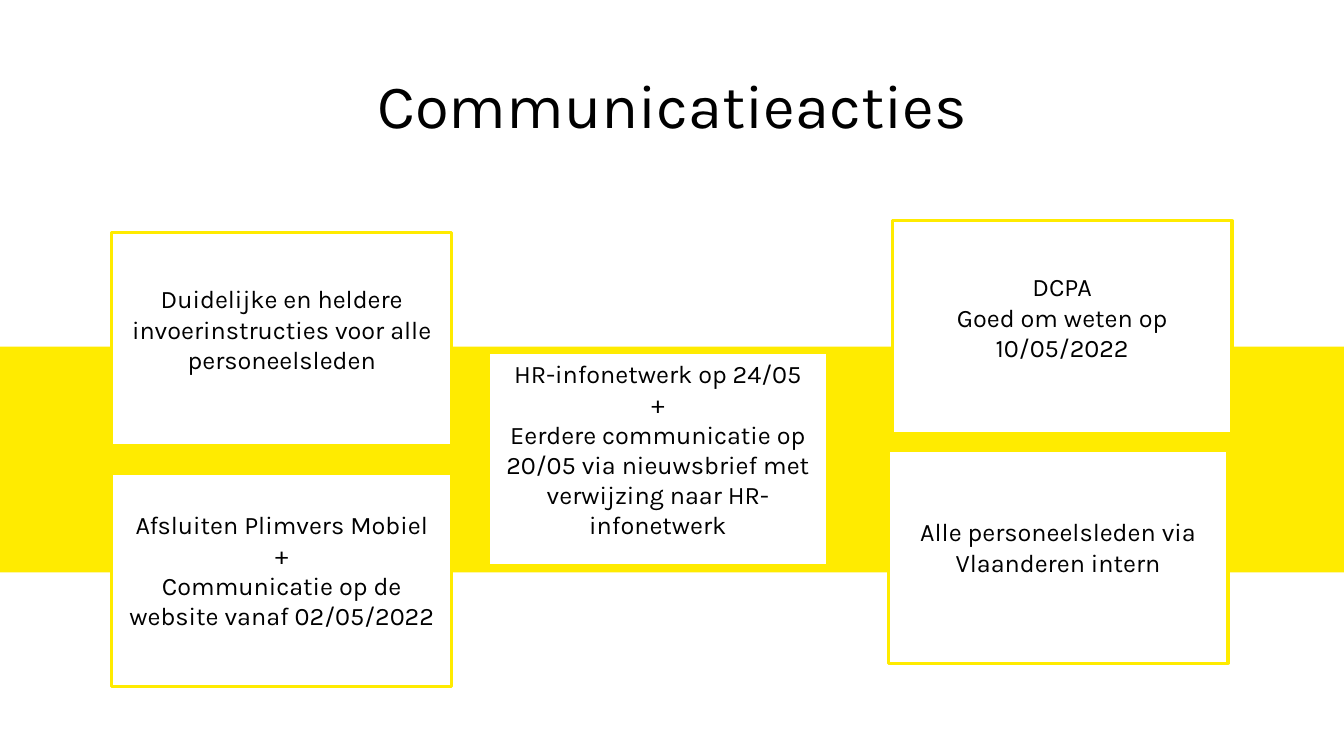
from dataclasses import dataclass

from pptx import Presentation
from pptx.dml.color import RGBColor
from pptx.enum.shapes import MSO_SHAPE
from pptx.enum.text import MSO_ANCHOR, PP_ALIGN
from pptx.util import Pt

RECTANGLE = MSO_SHAPE.RECTANGLE
MIDDLE = MSO_ANCHOR.MIDDLE
CENTER = PP_ALIGN.CENTER
EMU_PER_PX = 9144


@dataclass(frozen=True)
class Theme:
    font: str = "Karla"
    yellow: RGBColor = RGBColor(0xFF, 0xEB, 0x00)
    white: RGBColor = RGBColor(0xFF, 0xFF, 0xFF)
    black: RGBColor = RGBColor(0, 0, 0)
    title_size: Pt = Pt(44)
    title_spacing: Pt = Pt(38)
    card_size: Pt = Pt(18)
    border: Pt = Pt(2.25)


@dataclass(frozen=True)
class Card:
    left: int
    top: int
    lines: tuple[str, ...]


THEME = Theme()
PAGE_WIDTH, PAGE_HEIGHT = 1333, 750
CARD_WIDTH, CARD_HEIGHT = 337, 211
CARDS = (
    Card(111, 231, ("Duidelijke en heldere invoerinstructies voor alle personeelsleden",)),
    Card(885, 219, ("DCPA", "Goed om weten op 10/05/2022")),
    Card(484, 350, (
        "HR-infonetwerk op 24/05",
        "+",
        "Eerdere communicatie op 20/05 via nieuwsbrief met verwijzing naar HR-infonetwerk",
    )),
    Card(111, 470, (
        "Afsluiten Plimvers Mobiel",
        "+",
        "Communicatie op de website vanaf 02/05/2022",
    )),
    Card(881, 447, ("Alle personeelsleden via Vlaanderen intern",)),
)


def px(length: int) -> int:
    return length * EMU_PER_PX


def apply(target, values: dict) -> None:
    for name, value in values.items():
        setattr(target, name, value)


def place(shape, left: int, top: int, width: int, height: int) -> None:
    apply(shape, {"left": px(left), "top": px(top), "width": px(width), "height": px(height)})


def write(shape, lines: tuple[str, ...], size: Pt, side: int = 0, bottom: int = 0) -> None:
    frame = shape.text_frame
    apply(frame, {
        "word_wrap": True,
        "vertical_anchor": MIDDLE,
        "margin_left": px(side),
        "margin_right": px(side),
        "margin_top": 0,
        "margin_bottom": px(bottom),
    })
    frame.text = "\n".join(lines)
    for para in frame.paragraphs:
        para.alignment = CENTER
        for span in para.runs:
            apply(span.font, {"name": THEME.font, "size": size})
            span.font.color.rgb = THEME.black


def add_box(page, left: int, top: int, width: int, height: int, fill: RGBColor):
    box = page.shapes.add_shape(RECTANGLE, px(left), px(top), px(width), px(height))
    box.shadow.inherit = False
    box.fill.solid()
    box.fill.fore_color.rgb = fill
    box.line.fill.background()
    return box


def add_card(page, card: Card) -> None:
    box = add_box(page, card.left, card.top, CARD_WIDTH, CARD_HEIGHT, THEME.white)
    box.line.color.rgb = THEME.yellow
    box.line.width = THEME.border
    write(box, card.lines, THEME.card_size, side=12, bottom=20)


def main() -> None:
    deck = Presentation()
    apply(deck, {"slide_width": px(PAGE_WIDTH), "slide_height": px(PAGE_HEIGHT)})
    page = deck.slides.add_slide(deck.slide_layouts[5])
    title = page.shapes.title
    place(title, 41, 47, 1252, 133)
    write(title, ("Communicatieacties",), THEME.title_size)
    title.text_frame.paragraphs[0].line_spacing = THEME.title_spacing
    add_box(page, 0, 344, PAGE_WIDTH, 224, THEME.yellow)
    for card in CARDS:
        add_card(page, card)
    deck.save("out.pptx")


if __name__ == "__main__":
    main()
